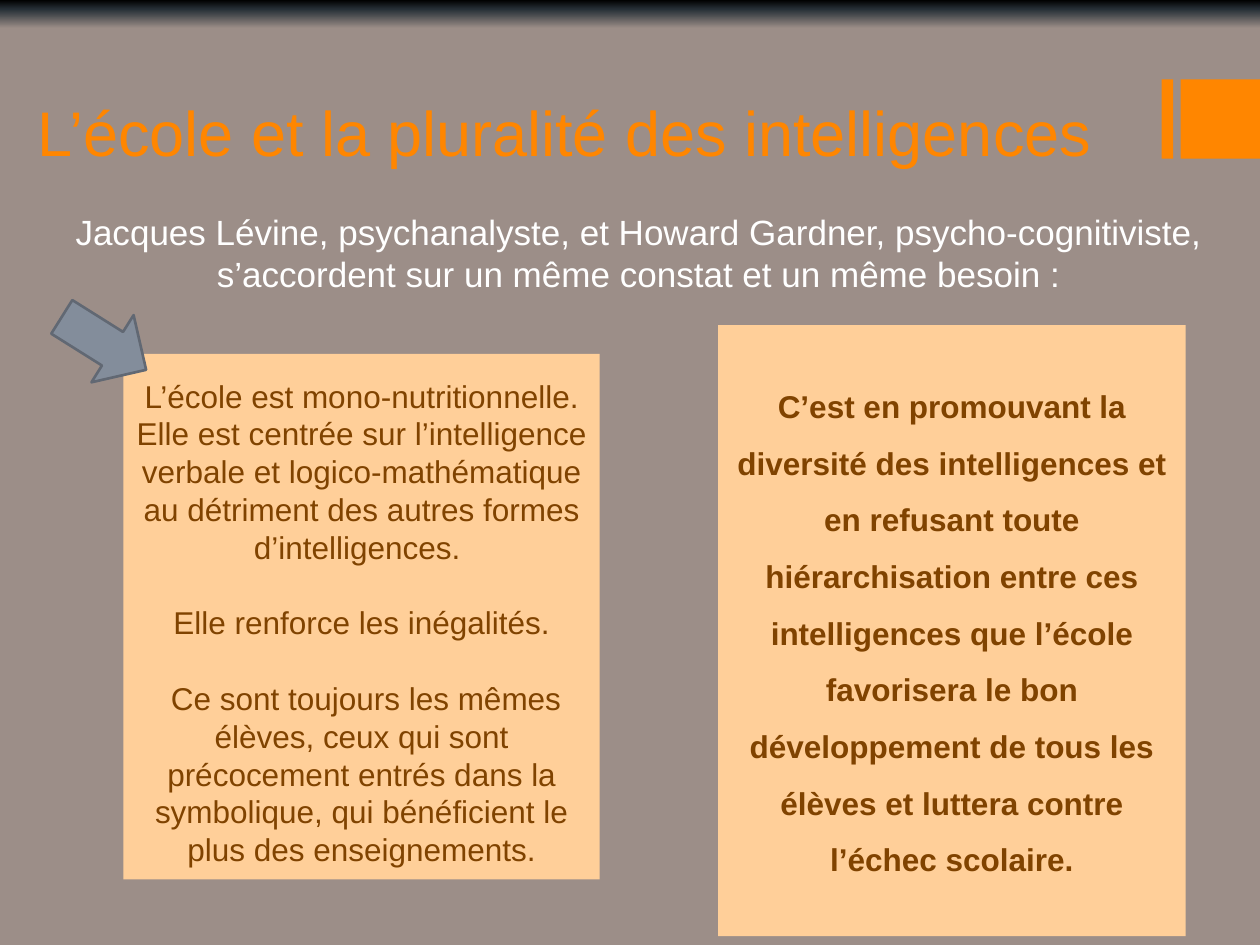
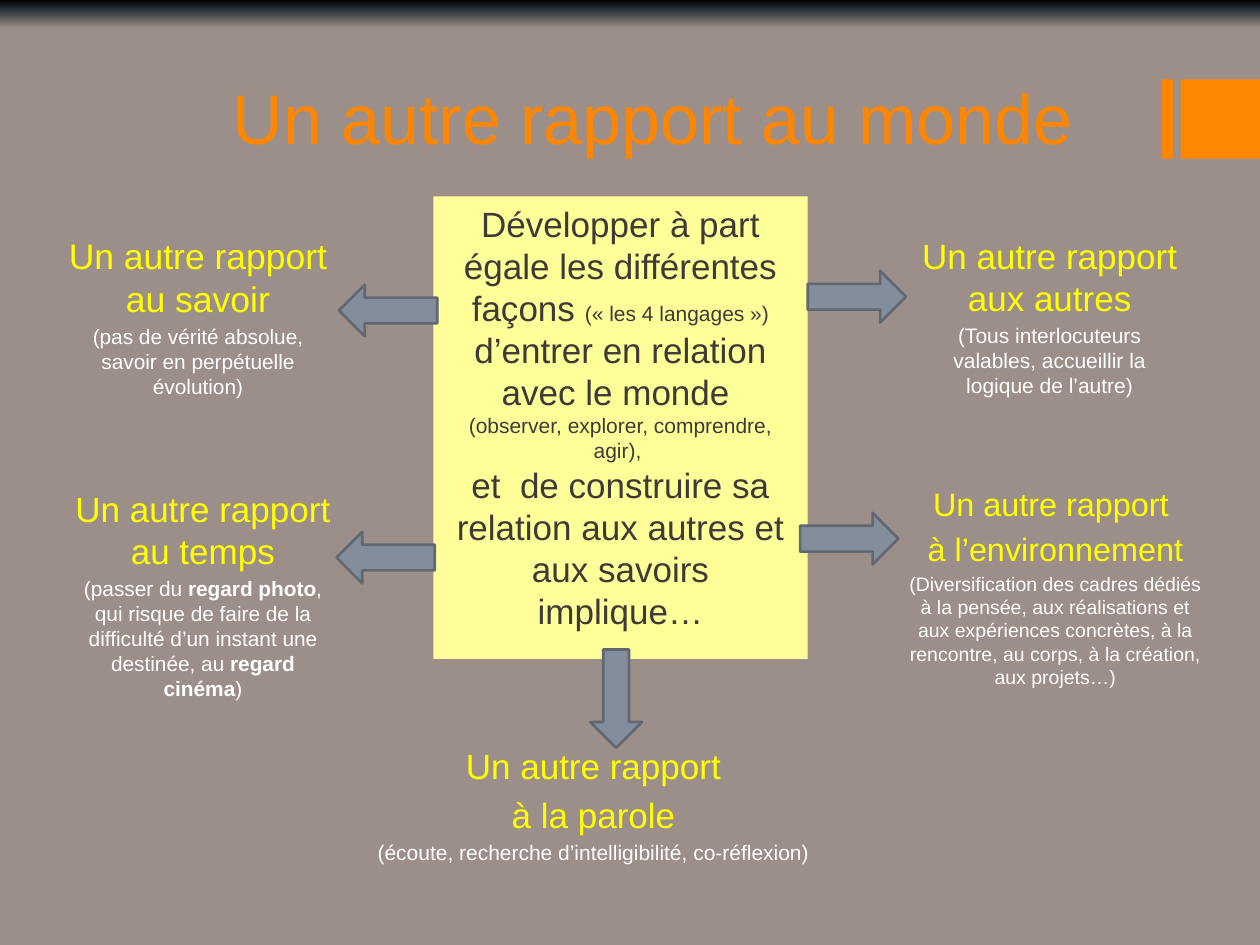
from copy import deepcopy

from pptx import Presentation
from pptx.dml.color import RGBColor
from pptx.enum.shapes import MSO_SHAPE
from pptx.enum.text import MSO_ANCHOR, PP_ALIGN
from pptx.oxml.ns import qn
from pptx.util import Pt

PX = 9144  # 100 px to the inch
FONT = "Arial"

ORANGE = RGBColor(0xFF, 0x86, 0x00)
PEACH = RGBColor(0xFF, 0xCF, 0x99)
BROWN = RGBColor(0x80, 0x43, 0x00)
PALE_YELLOW = RGBColor(0xFF, 0xFF, 0x99)
YELLOW = RGBColor(0xFF, 0xFF, 0x00)
CHARCOAL = RGBColor(0x40, 0x39, 0x35)
WHITE = RGBColor(0xFF, 0xFF, 0xFF)
STEEL = RGBColor(0x83, 0x8D, 0x9B)
SLATE = RGBColor(0x61, 0x68, 0x73)

BACKGROUND = [
    (0, RGBColor(0x00, 0x00, 0x00)),
    (0.01, RGBColor(0x27, 0x30, 0x37)),
    (0.03, RGBColor(0x9C, 0x8E, 0x88)),
]
BANDS = [(922, 63, 9, 63), (937, 63, 63, 63)]

# A paragraph is a list of (text, size, bold) spans.
INTRO = [[(
    "Jacques Lévine, psychanalyste, et Howard Gardner, psycho-cognitiviste, "
    "s’accordent sur un même constat et un même besoin :", 20, False)]]

FINDING = [
    [("L’école est mono-nutritionnelle.", 18, False)],
    [("Elle est centrée sur l’intelligence verbale et logico-mathématique au "
      "détriment des autres formes d’intelligences. ", 18, False)],
    [("Elle renforce les inégalités.", 18, False)],
    [(" Ce sont toujours les mêmes élèves, ceux qui sont précocement entrés "
      "dans la symbolique, qui bénéficient le plus des enseignements.", 18, False)],
]
FINDING_GAPS = [0, 0, 21.6, 21.6]

NEED = [[(
    "C’est en promouvant la diversité des intelligences et en refusant toute "
    "hiérarchisation entre ces intelligences que l’école favorisera le bon "
    "développement de tous les élèves et luttera contre l’échec scolaire.", 18, True)]]

LANGUAGES = [
    [("Développer à part égale les différentes façons ", 20, False),
     ("(«\u00a0les 4 langages\u00a0») ", 12, False),
     ("d’entrer en relation avec le monde ", 20, False)],
    [("(observer, explorer, comprendre, agir), ", 12, False)],
    [("et  de construire sa relation aux autres et aux savoirs", 20, False)],
    [("implique…", 20, False)],
]

# Place, heading size, heading lines, detail size, detail spans (text, bold)
RELATIONS = [
    ((281, 586, 375, 147), 20, ["Un autre rapport", "à la parole"],
     12, [("(écoute, recherche d’intelligibilité, co-réflexion)", False)]),
    ((713, 181, 235, 168), 20, ["Un autre rapport aux autres"],
     12, [("(Tous interlocuteurs valables, accueillir la logique de l’autre)", False)]),
    ((41, 382, 235, 157), 20, ["Un autre rapport au temps"],
     11.9, [("(passer du ", False), ("regard photo", True),
            (", qui risque de faire de la difficulté d’un instant une destinée, au ", False),
            ("regard cinéma", True), (")", False)]),
    ((705, 379, 260, 169), 18.5, ["Un autre rapport ", "à l’environnement"],
     11.1, [("(Diversification des cadres dédiés à la pensée, aux réalisations et aux "
             "expériences concrètes, à la rencontre, au corps, à la création, "
             "aux projets…)", False)]),
    ((37, 181, 235, 139), 20.3, ["Un autre rapport au savoir"],
     11.9, [("(pas de vérité absolue, savoir en perpétuelle évolution)", False)]),
]

# Left, top, rotation
RELATION_ARROWS = [(269, 226, 0), (635, 407, 180), (641, 215, 180),
                   (450, 534, 270), (267, 422, 0)]


def scaled(place):
    return [length * PX for length in place]


def add_block(page, place, fill, preset=MSO_SHAPE.RECTANGLE, line=None, rotation=0):
    block = page.shapes.add_shape(preset, *scaled(place))
    block.shadow.inherit = False
    block.fill.solid()
    block.fill.fore_color.rgb = fill
    if line is None:
        block.line.fill.background()
    else:
        block.line.color.rgb = line
        block.line.width = Pt(1.5)
    block.rotation = rotation
    return block


def add_arrow(page, place, preset, rotation):
    add_block(page, place, STEEL, preset, SLATE, rotation)


def write(box, paragraphs, colors, gaps=None, align=PP_ALIGN.CENTER, line_spacing=None,
          anchor=MSO_ANCHOR.TOP, inset_left=10, inset_top=5):
    """Fill a box; colors and gaps hold one value per paragraph."""
    frame = box.text_frame
    frame.word_wrap = True
    frame.vertical_anchor = anchor
    frame.margin_left, frame.margin_top = inset_left * PX, inset_top * PX
    for index, spans in enumerate(paragraphs):
        para = frame.add_paragraph() if index else frame.paragraphs[0]
        para.alignment = align
        if line_spacing:
            para.line_spacing = line_spacing
        if gaps and gaps[index]:
            para.space_before = Pt(gaps[index])
        for text, size, bold in spans:
            span = para.add_run()
            span.text = text
            span.font.name = FONT
            span.font.size = Pt(size)
            span.font.bold = bold
            span.font.color.rgb = colors[index]


def add_text(page, place, paragraphs, colors, **layout):
    write(page.shapes.add_textbox(*scaled(place)), paragraphs, colors, **layout)


def paint_background(page):
    fill = page.background.fill
    fill.gradient()
    fill.gradient_angle = 270
    stop_list = page.element.find(".//" + qn("a:gsLst"))
    stop_list.append(deepcopy(stop_list[-1]))
    for stop, (position, color) in zip(fill.gradient_stops, BACKGROUND):
        stop.position = position
        stop.color.rgb = color


def add_page(deck, title, place, size, align):
    page = deck.slides.add_slide(deck.slide_layouts[6])
    paint_background(page)
    for band in BANDS:
        add_block(page, band, ORANGE)
    add_text(page, place, [[(title, size, False)]], [ORANGE],
             align=align, anchor=MSO_ANCHOR.BOTTOM)
    return page


def add_relation(page, place, heading_size, headings, detail_size, details):
    paragraphs = [[(heading, heading_size, False)] for heading in headings]
    paragraphs.append([(text, detail_size, bold) for text, bold in details])
    colors = [YELLOW] * len(headings) + [WHITE]
    gaps = [0] + [spans[0][1] * 0.2 for spans in paragraphs[1:]]
    add_text(page, place, paragraphs, colors, gaps=gaps, inset_left=15)


def build_intelligences(deck):
    page = add_page(deck, "L’école et la pluralité des intelligences",
                    (20, 44, 894, 95), 36, PP_ALIGN.LEFT)
    add_text(page, (28, 162, 953, 94), INTRO, [WHITE], inset_left=15)
    finding = add_block(page, (98, 281, 378, 417), PEACH)
    write(finding, FINDING, [BROWN] * len(FINDING), gaps=FINDING_GAPS, inset_top=18)
    need = add_block(page, (570, 258, 371, 485), PEACH)
    write(need, NEED, [BROWN], line_spacing=1.5, inset_top=34)
    add_arrow(page, (43, 241, 79, 63), MSO_SHAPE.RIGHT_ARROW, 32.1)


def build_relations(deck):
    page = add_page(deck, "Un autre rapport au monde",
                    (122, 44, 792, 87), 40, PP_ALIGN.CENTER)
    languages = add_block(page, (344, 156, 297, 367), PALE_YELLOW)
    write(languages, LANGUAGES, [CHARCOAL] * len(LANGUAGES))
    for relation in RELATIONS:
        add_relation(page, *relation)
    for left, top, rotation in RELATION_ARROWS:
        add_arrow(page, (left, top, 78, 41), MSO_SHAPE.LEFT_ARROW, rotation)


def main():
    deck = Presentation()
    deck.slide_width, deck.slide_height = scaled((1000, 750))
    build_intelligences(deck)
    build_relations(deck)
    deck.save("out.pptx")


if __name__ == "__main__":
    main()
